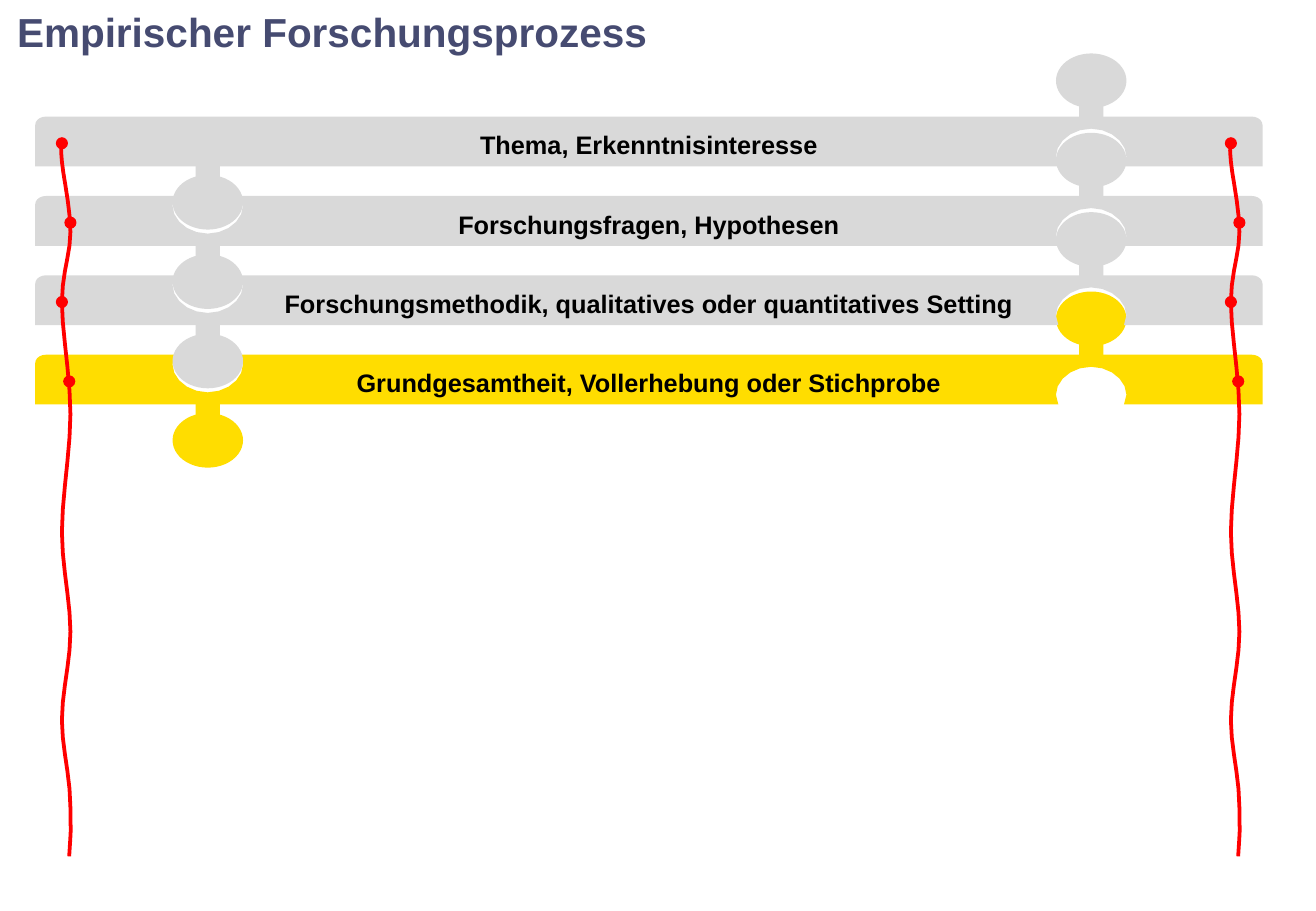
from dataclasses import dataclass
from pptx import Presentation
from pptx.dml.color import RGBColor
from pptx.enum.shapes import MSO_SHAPE
from pptx.enum.text import MSO_ANCHOR, PP_ALIGN
from pptx.util import Emu, Inches, Pt


@dataclass(frozen=True)
class Theme:
    font: str = "Arial"
    title_size: Pt = Pt(24)
    label_size: Pt = Pt(15)
    thread_width: Pt = Pt(2.25)
    title: RGBColor = RGBColor(0x46, 0x4B, 0x71)
    label: RGBColor = RGBColor(0, 0, 0)
    done: RGBColor = RGBColor(0xD9, 0xD9, 0xD9)
    current: RGBColor = RGBColor(0xFF, 0xDD, 0)
    thread: RGBColor = RGBColor(0xFF, 0, 0)


@dataclass(frozen=True)
class Box:
    left: float
    top: float
    width: float
    height: float

    def emu(self):
        return [cells(value) for value in (self.left, self.top, self.width, self.height)]


THEME = Theme()
COLUMNS = 1083
SLIDE_WIDTH, SLIDE_HEIGHT = Inches(10.83), Inches(7.5)
CELL = SLIDE_WIDTH / COLUMNS
BAR_STEPS, NECK_STEPS, THREAD_STEPS = 5, 2, 5

STACK = Box(29, 96, 1010, 41)
ROW_PITCH = 196 / 3
KNOB_LEFT, KNOB_RIGHT = 142, 869
THREAD_GAP = 962
DOT_DROP, DOT_SIZE = 22, 10

STAGES = [
    ("Thema, Erkenntnisinteresse", THEME.done, 51),
    ("Forschungsfragen, Hypothesen", THEME.done, 58),
    ("Forschungsmethodik, qualitatives oder quantitatives Setting", THEME.done, 51),
    ("Grundgesamtheit, Vollerhebung oder Stichprobe", THEME.current, 57),
]

SOCKET = [
    [(-27, 0)],
    [(-29, 8)],
    [(-29, 20), (-16, 31), (0, 31)],
    [(16, 31), (29, 20), (29, 8)],
    [(27, 0)],
]
NECK = [
    [(-10, 37)],
    [(-8, 47), (-10, 55), (-16, 57)],
    [(16, 57)],
    [(10, 55), (8, 47), (10, 37)],
]
THREAD = [
    [(52, 117)],
    [(50, 125), (50, 120), (51, 133)],
    [(52, 145), (58, 171), (58, 191)],
    [(58, 210), (51, 224), (51, 249)],
    [(51, 274), (58, 309), (58, 341)],
    [(58, 372), (51, 408), (51, 438)],
    [(51, 467), (58, 494), (58, 520)],
    [(58, 546), (51, 568), (51, 593)],
    [(51, 617), (58, 638), (58, 665)],
    [(58, 693), (59, 672), (57, 705)],
]


def cells(count):
    return Emu(round(count * CELL))


def place(steps, x, y, flip_x=1, flip_y=1):
    return [[(x + flip_x * px, y + flip_y * py) for px, py in step] for step in steps]


def bezier(start, first, second, end, t):
    weights = ((1 - t) ** 3, 3 * t * (1 - t) ** 2, 3 * t * t * (1 - t), t ** 3)
    corners = (start, first, second, end)
    return tuple(sum(w * c[axis] for w, c in zip(weights, corners)) for axis in (0, 1))


def trace(steps, count):
    points = [steps[0][0]]
    for step in steps[1:]:
        if len(step) == 1:
            points.append(step[0])
        else:
            start = points[-1]
            points += [bezier(start, *step, i / count) for i in range(1, count + 1)]
    return [(cells(x), cells(y)) for x, y in points]


def add_outline(shapes, steps, count, closed=True):
    start, *rest = trace(steps, count)
    builder = shapes.build_freeform(*start, scale=1.0)
    builder.add_line_segments(rest, close=closed)
    shape = builder.convert_to_shape()
    shape.shadow.inherit = False
    return shape


def paint(shape, color):
    shape.fill.solid()
    shape.fill.fore_color.rgb = color
    shape.line.fill.background()


def add_ellipse(shapes, box, color):
    shape = shapes.add_shape(MSO_SHAPE.OVAL, *box.emu())
    shape.shadow.inherit = False
    paint(shape, color)


def style_font(font, size, color):
    font.name, font.size, font.bold = THEME.font, size, True
    font.color.rgb = color


def add_title(slide, box, text):
    title = slide.shapes.title
    title.left, title.top, title.width, title.height = box.emu()
    frame = title.text_frame
    frame.text = text
    frame.word_wrap = False
    frame.vertical_anchor = MSO_ANCHOR.MIDDLE
    frame.margin_left, frame.margin_right = cells(14), cells(10)
    frame.margin_top = frame.margin_bottom = cells(5)
    paragraph = frame.paragraphs[0]
    paragraph.alignment = PP_ALIGN.LEFT
    style_font(paragraph.font, THEME.title_size, THEME.title)


def bar_steps(box, has_top_socket):
    right, bottom = box.left + box.width, box.top + box.height
    top_socket = place(SOCKET, box.left + KNOB_LEFT, box.top) if has_top_socket else []
    bottom_socket = place(SOCKET, box.left + KNOB_RIGHT, bottom, -1, -1)
    return [
        [(box.left + 9, box.top)],
        *top_socket,
        [(right - 9, box.top)],
        [(right - 4, box.top), (right, box.top + 3), (right, box.top + 7)],
        [(right, bottom)],
        *bottom_socket,
        [(box.left, bottom)],
        [(box.left, box.top + 7)],
        [(box.left, box.top + 3), (box.left + 4, box.top), (box.left + 9, box.top)],
    ]


def add_knob(shapes, center, box, direction, color):
    base = box.top if direction == 1 else box.top + box.height
    knob_top = base + 48 if direction == 1 else base - 93
    add_ellipse(shapes, Box(center - 29, knob_top, 58, 45), color)
    neck = place(NECK, center, base, flip_y=direction)
    paint(add_outline(shapes, neck, NECK_STEPS), color)


def add_stage(slide, box, text, color, dot_x, has_top_socket):
    shapes = slide.shapes
    bar = add_outline(shapes, bar_steps(box, has_top_socket), BAR_STEPS)
    paint(bar, color)
    frame = bar.text_frame
    frame.word_wrap = True
    frame.vertical_anchor = MSO_ANCHOR.MIDDLE
    frame.text = text
    paragraph = frame.paragraphs[0]
    paragraph.alignment = PP_ALIGN.CENTER
    paragraph.line_spacing = 1.2
    style_font(paragraph.font, THEME.label_size, THEME.label)
    add_knob(shapes, box.left + KNOB_LEFT, box, 1, color)
    add_knob(shapes, box.left + KNOB_RIGHT, box, -1, color)
    for shift in (0, THREAD_GAP):
        dot_left = dot_x + shift - DOT_SIZE / 2
        dot_top = box.top + DOT_DROP - DOT_SIZE / 2
        add_ellipse(shapes, Box(dot_left, dot_top, DOT_SIZE, DOT_SIZE), THEME.thread)


def add_threads(slide):
    for shift in (0, THREAD_GAP):
        steps = place(THREAD, shift, 0)
        thread = add_outline(slide.shapes, steps, THREAD_STEPS, closed=False)
        thread.fill.background()
        thread.line.color.rgb = THEME.thread
        thread.line.width = THEME.thread_width


def add_process(slide, box):
    for index, (text, color, dot_x) in reversed(list(enumerate(STAGES))):
        row = Box(box.left, box.top + index * ROW_PITCH, box.width, box.height)
        add_stage(slide, row, text, color, dot_x, index > 0)
    add_threads(slide)


def main():
    presentation = Presentation()
    presentation.slide_width, presentation.slide_height = SLIDE_WIDTH, SLIDE_HEIGHT
    slide = presentation.slides.add_slide(presentation.slide_layouts[5])
    add_title(slide, Box(0, 0, 547, 51), "Empirischer Forschungsprozess")
    add_process(slide, STACK)
    presentation.save("out.pptx")


if __name__ == "__main__":
    main()
